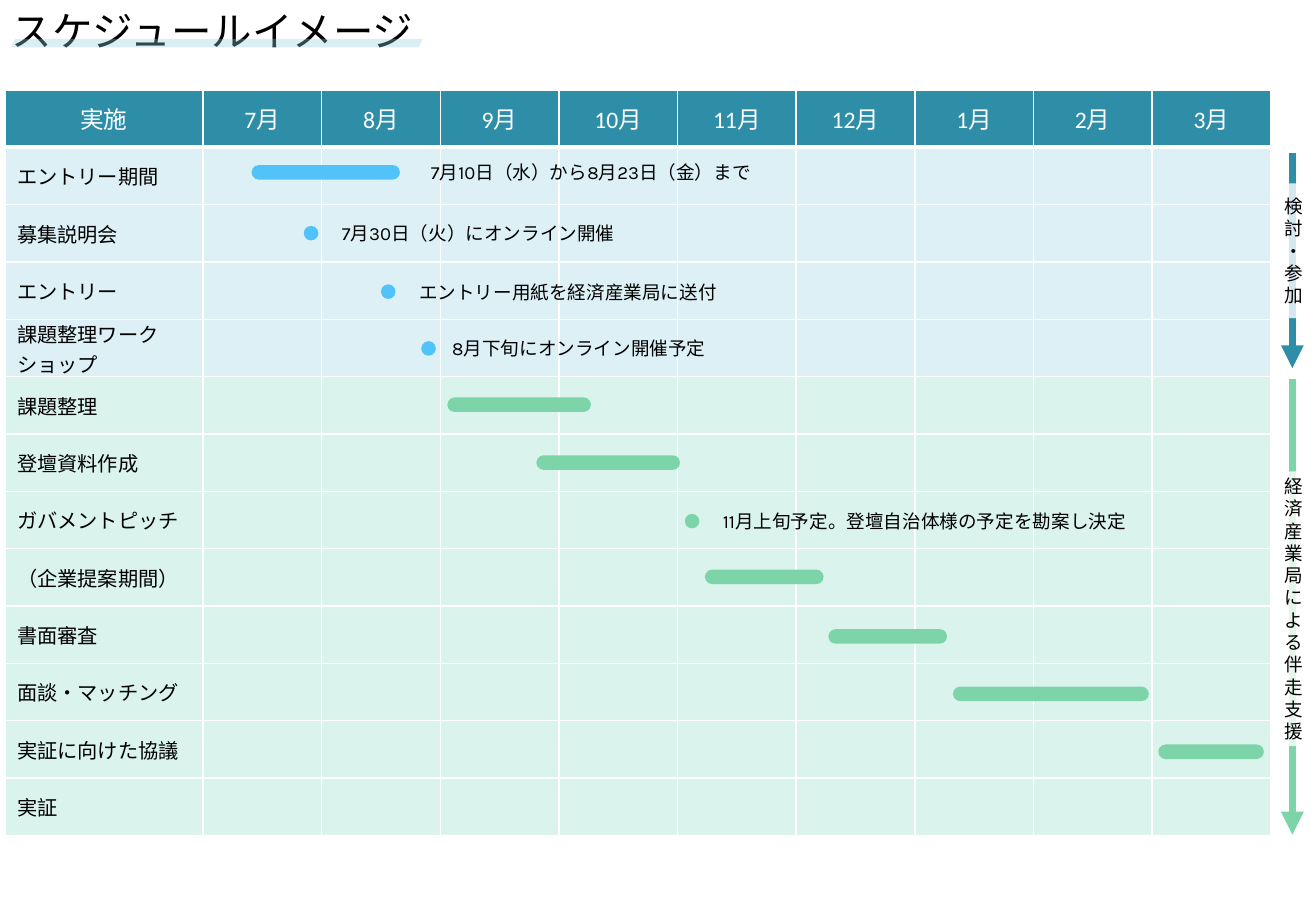
"""Build the July-to-March schedule slide with its task table, bars and phase arrows."""
from dataclasses import dataclass

from lxml.etree import SubElement
from pptx import Presentation
from pptx.dml.color import RGBColor
from pptx.enum.shapes import MSO_CONNECTOR as Connector, MSO_SHAPE as Shape
from pptx.enum.text import MSO_ANCHOR as Anchor, MSO_AUTO_SIZE as AutoSize, PP_ALIGN as Align
from pptx.oxml.ns import qn
from pptx.util import Inches, Pt


@dataclass(frozen=True)
class Theme:
    white: str = "FFFFFF"
    ink: str = "000000"
    teal: str = "2E8EA8"
    blue: str = "51C3F9"
    green: str = "7DD4A9"
    pale_blue: str = "DCF0F5"
    pale_green: str = "DAF3ED"
    underline: str = "95D1E2"
    table_font: str = "Calibri"
    text_font: str = "Karla"
    title_size: int = 24
    header_size: int = 14
    label_size: int = 12
    note_size: int = 11
    rule: int = 1
    header_rule: int = 3
    arrow: float = 4.5


@dataclass(frozen=True)
class Grid:
    left: float = 0.04
    top: float = 0.74
    label: float = 1.63
    month: float = 8.79 / 9
    row: float = 6.14 / 13

    def x(self, months: float) -> float:
        return self.left + self.label + months * self.month

    def y(self, rows: float) -> float:
        return self.top + rows * self.row


@dataclass(frozen=True)
class Task:
    name: str
    start: float = 0
    row: float = 0
    months: float = 0
    note: str = ""
    note_start: float = 0


@dataclass(frozen=True)
class Phase:
    name: str
    color: str
    start: float
    end: float
    name_row: float
    name_rows: float


THEME = Theme()
GRID = Grid()
WIDTH, HEIGHT = 10.83, 7.5
DOT = 0.12
ENTRY_ROWS = 4
MONTHS = (7, 8, 9, 10, 11, 12, 1, 2, 3)
TASKS = (
    Task("エントリー期間", 0.41, 1.31, 1.25, "7月10日（水）から8月23日（金）まで", 1.82),
    Task("募集説明会", 0.85, 2.37, 0, "7月30日（火）にオンライン開催", 1.07),
    Task("エントリー", 1.5, 3.39, 0, "エントリー用紙を経済産業局に送付", 1.72),
    Task("課題整理ワークショップ", 1.84, 4.38, 0, "8月下旬にオンライン開催予定", 2),
    Task("課題整理", 2.06, 5.36, 1.21),
    Task("登壇資料作成", 2.81, 6.37, 1.21),
    Task("ガバメントピッチ", 4.06, 7.39, 0, "11月上旬予定。登壇自治体様の予定を勘案し決定", 4.28),
    Task("（企業提案期間）", 4.23, 8.36, 1),
    Task("書面審査", 5.27, 9.4, 1),
    Task("面談・マッチング", 6.32, 10.4, 1.65),
    Task("実証に向けた協議", 8.05, 11.41, 0.89),
    Task("実証"),
)
PHASES = (
    Phase("経済産業局による伴走支援", THEME.green, 5.04, 12.98, 6.65, 4.79),
    Phase("検討・参加", THEME.teal, 1.1, 4.85, 1.63, 2.35),
)


def rgb(color: str) -> RGBColor:
    return RGBColor.from_string(color)


def write(frame, text: str, *, size: float, font: str = THEME.text_font,
          color: str = THEME.ink, align=Align.LEFT) -> None:
    para = frame.paragraphs[0]
    para.alignment = align
    span = para.add_run()
    span.text = text
    span.font.name, span.font.size, span.font.bold = font, Pt(size), False
    span.font.color.rgb = rgb(color)
    if font == THEME.text_font:
        SubElement(span.font._element, qn("a:ea"), typeface=font)


def add_text(page, text: str, left: float, top: float, width: float, height: float,
             size: float) -> None:
    box = page.shapes.add_textbox(*map(Inches, (left, top, width, height)))
    box.text_frame.word_wrap = True
    box.text_frame.auto_size = AutoSize.SHAPE_TO_FIT_TEXT
    write(box.text_frame, text, size=size)


def add_block(page, kind, left: float, top: float, width: float, height: float,
              color: str, opacity: int = 100):
    block = page.shapes.add_shape(kind, *map(Inches, (left, top, width, height)))
    block.shadow.inherit = False
    block.fill.solid()
    block.fill.fore_color.rgb = rgb(color)
    block.line.fill.background()
    if opacity < 100:
        tint = block.element.spPr.find(qn("a:solidFill")).find(qn("a:srgbClr"))
        SubElement(tint, qn("a:alpha"), val=str(opacity * 1000))
    return block


def style_cell(cell, fill: str, bottom: float = THEME.rule) -> None:
    properties = cell._tc.get_or_add_tcPr()
    for side in "LRTB":
        weight = bottom if side == "B" else THEME.rule
        line = SubElement(properties, qn(f"a:ln{side}"), w=str(Pt(weight)))
        SubElement(SubElement(line, qn("a:solidFill")), qn("a:srgbClr"), val=THEME.white)
    cell.fill.solid()
    cell.fill.fore_color.rgb = rgb(fill)
    cell.vertical_anchor = Anchor.MIDDLE
    cell.margin_top = cell.margin_bottom = 0


def add_schedule(page) -> None:
    rows, columns = len(TASKS) + 1, len(MONTHS) + 1
    size = (GRID.label + len(MONTHS) * GRID.month, rows * GRID.row)
    table = page.shapes.add_table(
        rows, columns, *map(Inches, (GRID.left, GRID.top, *size))).table
    for index, column in enumerate(table.columns):
        column.width = Inches(GRID.month if index else GRID.label)
    for row in table.rows:
        row.height = Inches(GRID.row)
    for index, heading in enumerate(("実施", *(f"{month}月" for month in MONTHS))):
        cell = table.cell(0, index)
        style_cell(cell, THEME.teal, THEME.header_rule)
        write(cell.text_frame, heading, size=THEME.header_size, font=THEME.table_font,
              color=THEME.white, align=Align.CENTER)
    for index, task in enumerate(TASKS, 1):
        for column in range(columns):
            style_cell(table.cell(index, column),
                       THEME.pale_blue if index <= ENTRY_ROWS else THEME.pale_green)
        write(table.cell(index, 0).text_frame, task.name, size=THEME.label_size,
              font=THEME.table_font)


def add_task(page, task: Task, color: str) -> None:
    bar = add_block(page, Shape.ROUNDED_RECTANGLE, GRID.x(task.start), GRID.y(task.row),
                    task.months * GRID.month or DOT, DOT, color)
    bar.adjustments[0] = 0.5
    if task.note:
        add_text(page, task.note, GRID.x(task.note_start), GRID.y(task.row - 0.17),
                 3.9 * GRID.month, 0.6 * GRID.row, THEME.note_size)


def add_phase(page, phase: Phase) -> None:
    center = GRID.x(9.18)
    arrow = page.shapes.add_connector(Connector.STRAIGHT, *map(
        Inches, (center, GRID.y(phase.start), center, GRID.y(phase.end))))
    arrow.line.color.rgb = rgb(phase.color)
    arrow.line.width = Pt(THEME.arrow)
    SubElement(arrow.line._get_or_add_ln(), qn("a:tailEnd"), type="triangle")
    SubElement(arrow.element.spPr, qn("a:effectLst"))
    label = add_block(page, Shape.RECTANGLE, GRID.x(9.01), GRID.y(phase.name_row),
                      0.33 * GRID.month, phase.name_rows * GRID.row, THEME.white, 80)
    label.text_frame.word_wrap = True
    label.text_frame.vertical_anchor = Anchor.MIDDLE
    write(label.text_frame, phase.name, size=THEME.note_size, align=Align.CENTER)


def main() -> None:
    deck = Presentation()
    deck.slide_width, deck.slide_height = Inches(WIDTH), Inches(HEIGHT)
    page = deck.slides.add_slide(deck.slide_layouts[6])
    add_text(page, "スケジュールイメージ", 0, 0, WIDTH, HEIGHT / 15, THEME.title_size)
    add_schedule(page)
    for index, task in enumerate(TASKS):
        if task.row:
            add_task(page, task, THEME.blue if index < ENTRY_ROWS else THEME.green)
    for phase in PHASES:
        add_phase(page, phase)
    underline = add_block(page, Shape.PARALLELOGRAM, 0.09, 0.32, 3.39, 0.07,
                          THEME.underline, 34)
    underline.adjustments[0] = 0.52
    deck.save("out.pptx")


if __name__ == "__main__":
    main()
